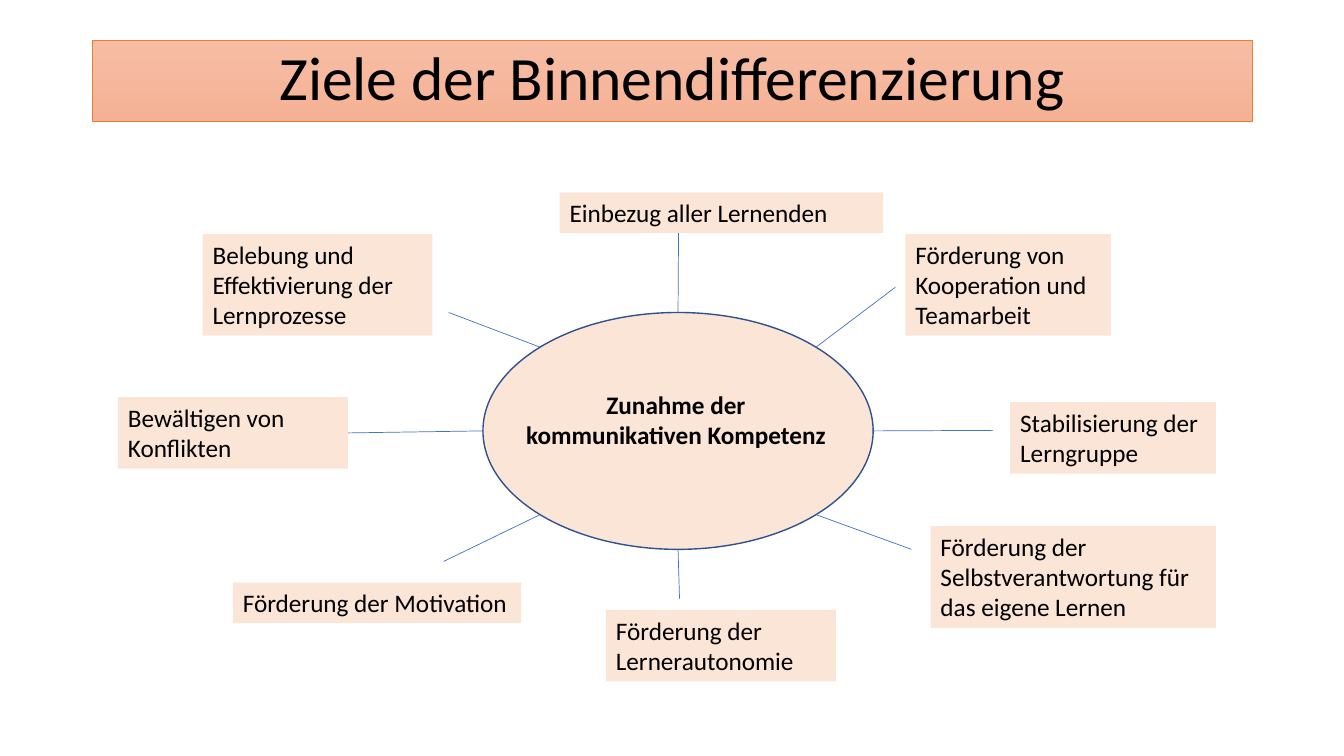
"""Build the slide on the goals of differentiated teaching as a hub with eight spokes."""
from dataclasses import dataclass
from math import cos, radians, sin

from lxml.etree import SubElement
from pptx import Presentation
from pptx.dml.color import RGBColor
from pptx.enum.shapes import MSO_CONNECTOR, MSO_SHAPE
from pptx.enum.text import MSO_ANCHOR, MSO_AUTO_SIZE, PP_ALIGN
from pptx.oxml.ns import qn
from pptx.util import Inches, Pt


@dataclass(frozen=True)
class Theme:
    font: str = "Calibri"
    text: RGBColor = RGBColor.from_string("000000")
    peach: RGBColor = RGBColor.from_string("FBE5D6")
    title_top: RGBColor = RGBColor.from_string("F7BDA4")
    title_bottom: RGBColor = RGBColor.from_string("F5B195")
    title_line: RGBColor = RGBColor.from_string("ED7D31")
    hub_line: RGBColor = RGBColor.from_string("2F528F")
    spoke: RGBColor = RGBColor.from_string("4472C4")
    title_size: Pt = Pt(44)
    body_size: Pt = Pt(18)
    thin: Pt = Pt(0.5)
    outline: Pt = Pt(1)


theme = Theme()


def write(shape, text, size, align=PP_ALIGN.LEFT, bold=False):
    """Put one formatted run into a shape and return its paragraph."""
    shape.text_frame.word_wrap = True
    para = shape.text_frame.paragraphs[0]
    para.alignment = align
    span = para.add_run()
    span.text = text
    span.font.name = theme.font
    span.font.size = size
    span.font.bold = bold
    span.font.color.rgb = theme.text
    return para


deck = Presentation()
deck.slide_width = Inches(13.33)
deck.slide_height = Inches(7.5)
page = deck.slides.add_slide(deck.slide_layouts[5])

title = page.shapes.title
title.left, title.top = Inches(0.92), Inches(0.4)
title.width, title.height = Inches(11.5), Inches(0.8)
title.fill.gradient()
title.fill.gradient_angle = 270
for stop, color in zip(title.fill.gradient_stops, (theme.title_top, theme.title_bottom)):
    stop.color.rgb = color
title.line.color.rgb = theme.title_line
title.line.width = theme.thin
title.text_frame.auto_size = MSO_AUTO_SIZE.NONE
title.text_frame.vertical_anchor = MSO_ANCHOR.MIDDLE
heading = write(title, "Ziele der Binnendifferenzierung", theme.title_size, PP_ALIGN.CENTER)
heading.line_spacing = 0.9

hub_left, hub_top, hub_width, hub_height = 4.79, 3.1, 3.87, 2.35
hub = page.shapes.add_shape(
    MSO_SHAPE.OVAL, Inches(hub_left), Inches(hub_top), Inches(hub_width), Inches(hub_height)
)
hub.shadow.inherit = False
hub.fill.solid()
hub.fill.fore_color.rgb = theme.peach
hub.line.color.rgb = theme.hub_line
hub.line.width = theme.outline

spoke_ends = [
    (9.85, 4.27), (9.04, 5.45), (6.74, 5.94), (4.4, 5.57),
    (3.46, 4.27), (4.45, 3.1), (6.73, 2.3), (8.88, 2.85),
]
spokes = []
for step, (end_x, end_y) in enumerate(spoke_ends):
    angle = radians(45 * step)
    start_x = hub_left + hub_width / 2 * (1 + cos(angle))
    start_y = hub_top + hub_height / 2 * (1 + sin(angle))
    spoke = page.shapes.add_connector(
        MSO_CONNECTOR.STRAIGHT, Inches(start_x), Inches(start_y), Inches(end_x), Inches(end_y)
    )
    spoke.line.color.rgb = theme.spoke
    spoke.line.width = theme.thin
    SubElement(spoke.element.spPr, qn("a:effectLst"))
    spokes.append(spoke)

goals = [
    ("Stabilisierung der Lerngruppe", 10.02, 3.99, 2.04, 0.71),
    ("Förderung der Selbstverantwortung für das eigene Lernen", 9.23, 5.22, 2.83, 1.01),
    ("Förderung der Lernerautonomie", 6.01, 6.05, 2.28, 0.71),
    ("Förderung der Motivation", 2.31, 5.78, 2.86, 0.4),
    ("Bewältigen von Konflikten", 1.17, 3.94, 2.28, 0.71),
    ("Belebung und Effektivierung der Lernprozesse", 2.01, 2.32, 2.28, 1.01),
    ("Einbezug aller Lernenden", 5.55, 1.91, 3.21, 0.4),
    ("Förderung von Kooperation und Teamarbeit", 8.98, 2.32, 2.04, 1.01),
]
goal_boxes = []
for text, *place in goals:
    box = page.shapes.add_textbox(*map(Inches, place))
    box.fill.solid()
    box.fill.fore_color.rgb = theme.peach
    write(box, text, theme.body_size)
    goal_boxes.append(box)
spokes[4].end_connect(goal_boxes[4], 3)

core = page.shapes.add_textbox(Inches(5.12), Inches(3.81), Inches(3.17), Inches(1.01))
write(core, "Zunahme der kommunikativen Kompetenz", theme.body_size, PP_ALIGN.CENTER, bold=True)

deck.save("out.pptx")
